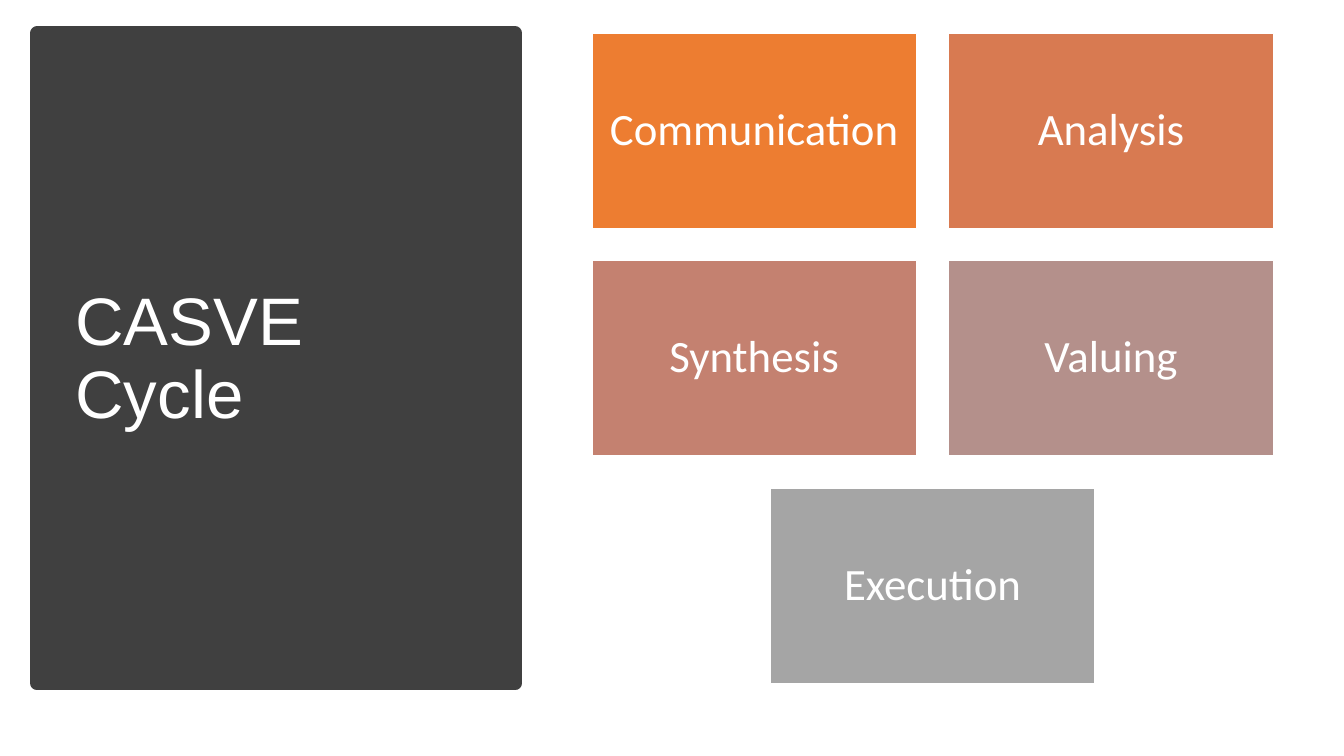
from dataclasses import dataclass

from pptx import Presentation
from pptx.dml.color import RGBColor
from pptx.enum.shapes import MSO_SHAPE
from pptx.enum.text import MSO_ANCHOR, PP_ALIGN
from pptx.util import Inches, Pt


@dataclass(frozen=True)
class Theme:
    """Colours, fonts and type sizes of the slide."""
    panel: str = "404040"
    white: str = "FFFFFF"
    steps: tuple = ("ED7D31", "D87A51", "C48170", "B4908B", "A5A5A5")
    title_font: str = "Arial"
    step_font: str = "Calibri"
    title_size: int = 48
    step_size: int = 32


THEME = Theme()
STEPS = ("Communication", "Analysis", "Synthesis", "Valuing", "Execution")


def write_text(shape, text, *, font, size, color=THEME.white,
               align=PP_ALIGN.LEFT, margins=(0.1, 0.05)):
    """Put one vertically centred paragraph into a shape."""
    frame = shape.text_frame
    frame.word_wrap = True
    frame.vertical_anchor = MSO_ANCHOR.MIDDLE
    frame.margin_left = frame.margin_right = Inches(margins[0])
    frame.margin_top = frame.margin_bottom = Inches(margins[1])
    paragraph = frame.paragraphs[0]
    paragraph.alignment = align
    paragraph.line_spacing = 0.9
    run = paragraph.add_run()
    run.text = text
    run.font.name = font
    run.font.size = Pt(size)
    run.font.color.rgb = RGBColor.from_string(color)


def add_rectangle(slide, box, fill, line, line_width):
    """Add a flat rectangle to the slide in the given box."""
    shape = slide.shapes.add_shape(MSO_SHAPE.RECTANGLE, *map(Inches, box))
    shape.shadow.inherit = False
    shape.fill.solid()
    shape.fill.fore_color.rgb = RGBColor.from_string(fill)
    shape.line.color.rgb = RGBColor.from_string(line)
    shape.line.width = Pt(line_width)
    return shape


def add_title_panel(slide, box):
    """Draw the dark panel with the slide title inside it."""
    left, top, width, height = box
    add_rectangle(slide, box, THEME.panel, THEME.panel, 10)
    title = slide.shapes.add_textbox(
        Inches(left + 0.28), Inches(top + 0.37),
        Inches(width - 0.58), Inches(height - 0.7))
    write_text(title, "CASVE Cycle", font=THEME.title_font, size=THEME.title_size)


def add_step_grid(slide, box, columns=2, gap=0.32):
    """Lay out the steps in rows, centring a row that is not full."""
    left, top, width, height = box
    rows = -(-len(STEPS) // columns)
    step_width = (width - gap * (columns - 1)) / columns
    step_height = (height - gap * (rows - 1)) / rows
    for index, (name, color) in enumerate(zip(STEPS, THEME.steps)):
        row, column = divmod(index, columns)
        in_row = min(columns, len(STEPS) - row * columns)
        indent = (columns - in_row) * (step_width + gap) / 2
        step_box = (left + indent + column * (step_width + gap),
                    top + row * (step_height + gap), step_width, step_height)
        step = add_rectangle(slide, step_box, color, THEME.white, 1)
        write_text(step, name, font=THEME.step_font, size=THEME.step_size,
                   align=PP_ALIGN.CENTER, margins=(0.13, 0.13))


def main():
    """Build and save the presentation."""
    presentation = Presentation()
    presentation.slide_width = Inches(13.33)
    presentation.slide_height = Inches(7.5)
    slide = presentation.slides.add_slide(presentation.slide_layouts[6])
    add_title_panel(slide, (0.37, 0.33, 4.74, 6.45))
    add_step_grid(slide, (5.87, 0.33, 6.76, 6.45))
    presentation.save("out.pptx")


if __name__ == "__main__":
    main()
